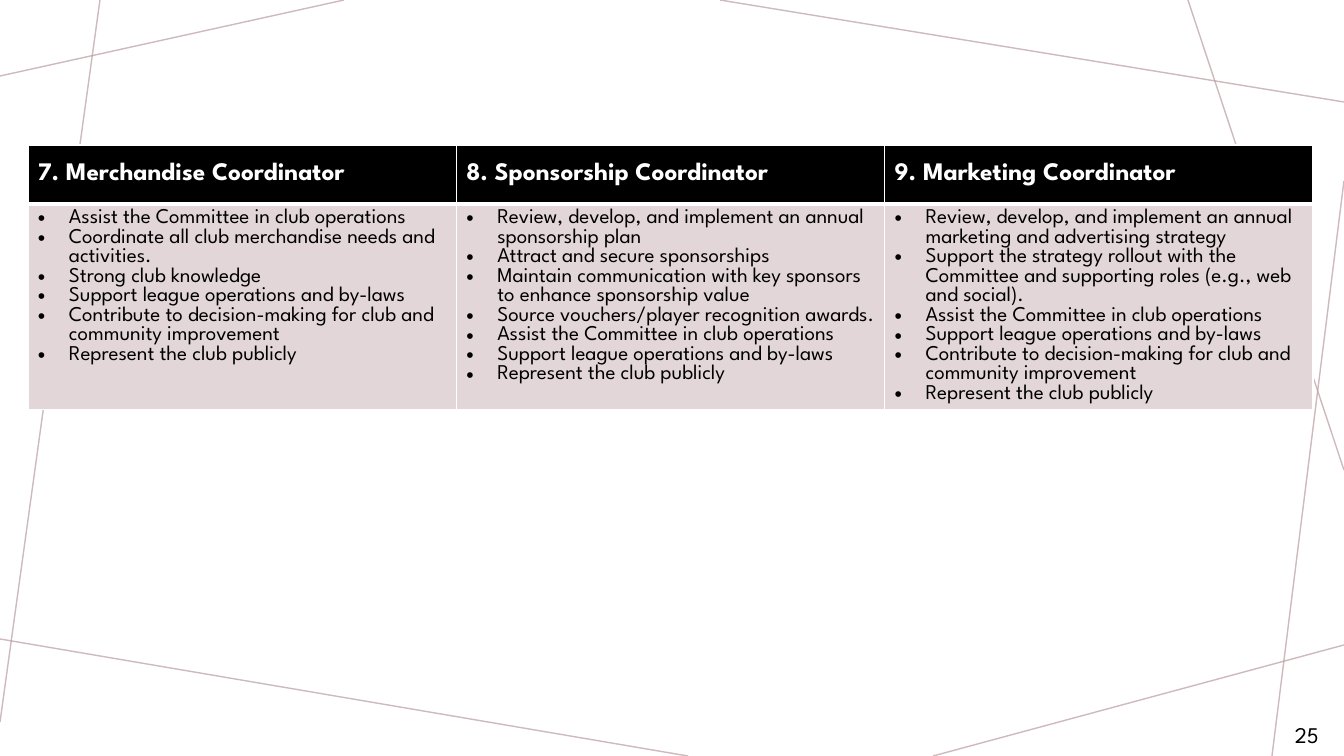
from dataclasses import dataclass

from lxml import etree
from pptx import Presentation
from pptx.dml.color import RGBColor
from pptx.enum.shapes import MSO_CONNECTOR
from pptx.enum.text import MSO_ANCHOR
from pptx.oxml.ns import qn
from pptx.util import Pt

STRAIGHT = MSO_CONNECTOR.STRAIGHT
TOP, MIDDLE = MSO_ANCHOR.TOP, MSO_ANCHOR.MIDDLE
EMU_PER_PX = 12192000 / 1344
BLANK_LAYOUT = 6


@dataclass(frozen=True)
class Theme:
    font: str = "League Spartan"
    ink: str = "000000"
    paper: str = "FFFFFF"
    panel: str = "E3D6D8"
    web: str = "BA9CA0"
    web_opacity: int = 70
    heading_size: int = 18
    body_size: int = 15
    number_size: int = 16


THEME = Theme()
SLIDE_BOX = (0, 0, 1344, 756)
TABLE_BOX = (28, 145, 1285, 264)
NUMBER_BOX = (1285, 715, 69, 40)
HEADER_HEIGHT = 59
CELL_INSETS = (10, 5, 10, 5)
BULLET_INDENT = 31

WEB_LINES = [
    ((344, 0), (0, 76)),
    ((100, 0), (0, 722)),
    ((688, 756), (0, 639)),
    ((1344, 645), (933, 756)),
    ((1344, 181), (1272, 756)),
    ((1344, 470), (1188, 0)),
    ((1344, 102), (720, 0)),
]

ASSIST = "Assist the Committee in club operations"
SUPPORT = "Support league operations and by-laws"
CONTRIBUTE = "Contribute to decision-making for club and community improvement"
REPRESENT = "Represent the club publicly"
ROLES = {
    "7. Merchandise Coordinator": [
        ASSIST,
        "Coordinate all club merchandise needs and activities.",
        "Strong club knowledge",
        SUPPORT,
        CONTRIBUTE,
        REPRESENT,
    ],
    "8. Sponsorship Coordinator": [
        "Review, develop, and implement an annual sponsorship plan",
        "Attract and secure sponsorships",
        "Maintain communication with key sponsors to enhance sponsorship value",
        "Source vouchers/player recognition awards.",
        ASSIST,
        SUPPORT,
        REPRESENT,
    ],
    "9. Marketing Coordinator": [
        "Review, develop, and implement an annual marketing and advertising strategy",
        "Support the strategy rollout with the Committee and supporting roles "
        "(e.g., web and social).",
        ASSIST,
        SUPPORT,
        CONTRIBUTE,
        REPRESENT,
    ],
}


def px(length):
    return round(length * EMU_PER_PX)


def add_run(paragraph, text, size, color, bold=False):
    run = paragraph.add_run()
    run.text = text
    run.font.name = THEME.font
    run.font.size = Pt(size)
    run.font.bold = bold
    run.font.color.rgb = RGBColor.from_string(color)


def add_bullet(paragraph):
    properties = paragraph._p.get_or_add_pPr()
    properties.set("marL", str(px(BULLET_INDENT)))
    properties.set("indent", str(-px(BULLET_INDENT)))
    color = etree.SubElement(properties, qn("a:buClr"))
    etree.SubElement(color, qn("a:srgbClr"), val=THEME.ink)
    etree.SubElement(properties, qn("a:buFont"), typeface="Arial")
    etree.SubElement(properties, qn("a:buChar"), char="•")


def set_borders(cell, widths):
    """Draw solid borders; widths maps sides (in L, R, T, B order) to points."""
    properties = cell._tc.get_or_add_tcPr()
    for side, width in widths.items():
        border = etree.SubElement(properties, qn(f"a:ln{side}"), w=str(Pt(width)))
        fill = etree.SubElement(border, qn("a:solidFill"))
        etree.SubElement(fill, qn("a:srgbClr"), val=THEME.paper)


def format_cell(cell, color, anchor, borders):
    set_borders(cell, borders)
    cell.fill.solid()
    cell.fill.fore_color.rgb = RGBColor.from_string(color)
    cell.vertical_anchor = anchor
    (cell.margin_left, cell.margin_top,
     cell.margin_right, cell.margin_bottom) = map(px, CELL_INSETS)


def add_web(slide, box):
    left, top, _, _ = box
    for (x1, y1), (x2, y2) in WEB_LINES:
        line = slide.shapes.add_connector(
            STRAIGHT, px(left + x1), px(top + y1), px(left + x2), px(top + y2))
        line.line.width = Pt(1)
        line.line.color.rgb = RGBColor.from_string(THEME.web)
        color = line._element.spPr.find(".//" + qn("a:srgbClr"))
        etree.SubElement(color, qn("a:alpha"), val=str(THEME.web_opacity * 1000))
        etree.SubElement(line._element.spPr, qn("a:effectLst"))


def add_role_table(slide, box):
    left, top, width, height = box
    table = slide.shapes.add_table(2, len(ROLES), *map(px, box)).table
    table.horz_banding = False
    table.rows[0].height = px(HEADER_HEIGHT)
    table.rows[1].height = px(height - HEADER_HEIGHT)
    for index, (role, duties) in enumerate(ROLES.items()):
        table.columns[index].width = px(width / len(ROLES))
        heading, body = table.cell(0, index), table.cell(1, index)
        format_cell(heading, THEME.ink, MIDDLE, {"L": 1, "R": 1, "T": 1, "B": 3})
        add_run(heading.text_frame.paragraphs[0], role,
                THEME.heading_size, THEME.paper, bold=True)
        format_cell(body, THEME.panel, TOP, {"L": 1, "R": 1, "T": 3, "B": 1})
        frame = body.text_frame
        for number, duty in enumerate(duties):
            paragraph = frame.add_paragraph() if number else frame.paragraphs[0]
            add_bullet(paragraph)
            add_run(paragraph, duty, THEME.body_size, THEME.ink)


def add_slide_number(slide, box):
    frame = slide.shapes.add_textbox(*map(px, box)).text_frame
    frame.word_wrap = True
    frame.vertical_anchor = MIDDLE
    add_run(frame.paragraphs[0], "25", THEME.number_size, THEME.ink)


def build_role_slide(presentation):
    slide = presentation.slides.add_slide(presentation.slide_layouts[BLANK_LAYOUT])
    slide.background.fill.solid()
    slide.background.fill.fore_color.rgb = RGBColor.from_string(THEME.paper)
    add_web(slide, SLIDE_BOX)
    add_role_table(slide, TABLE_BOX)
    add_slide_number(slide, NUMBER_BOX)


def main():
    presentation = Presentation()
    presentation.slide_width, presentation.slide_height = map(px, SLIDE_BOX[2:])
    build_role_slide(presentation)
    presentation.save("out.pptx")


if __name__ == "__main__":
    main()
